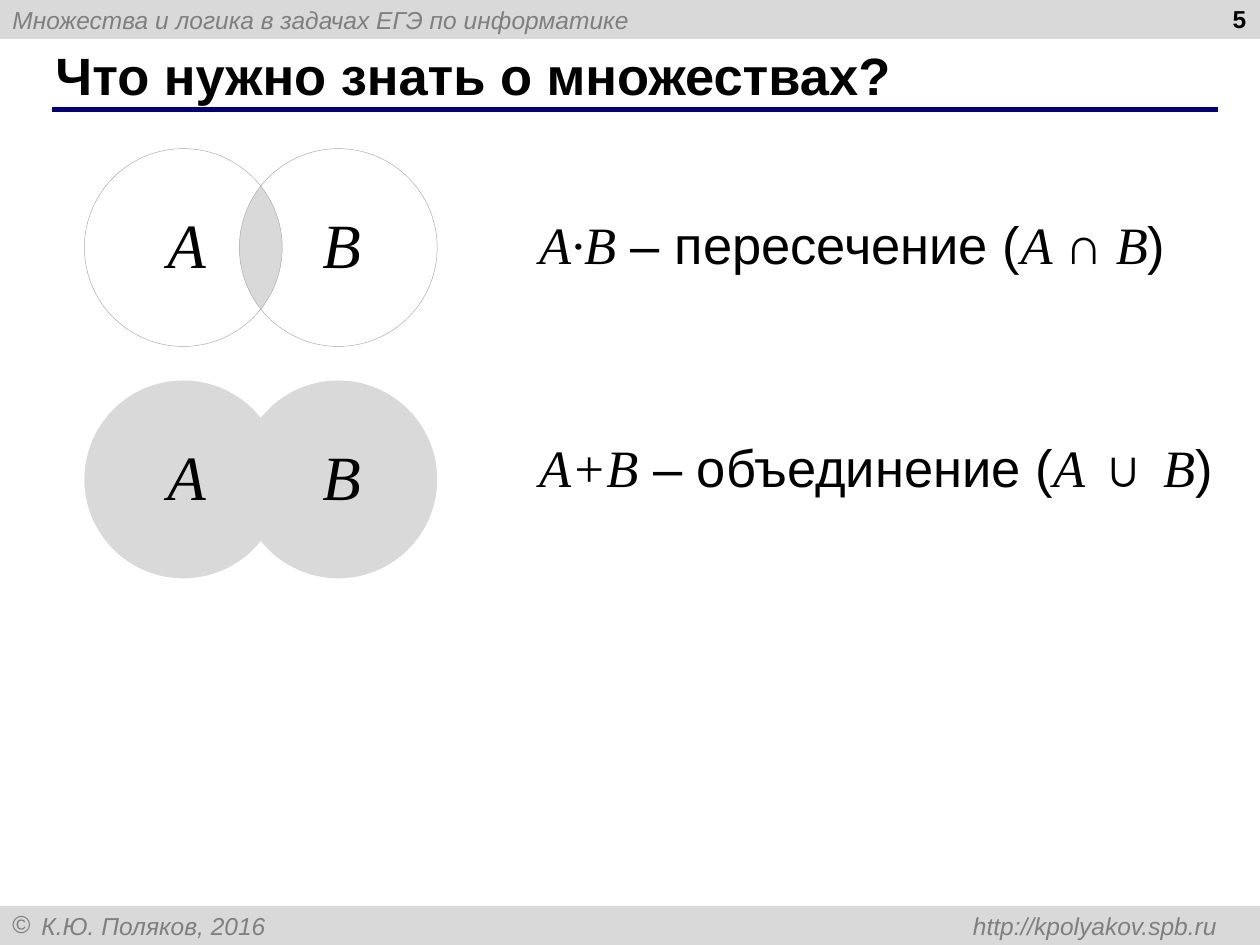
from math import acos, cos, sin
from lxml.etree import SubElement
from pptx import Presentation
from pptx.dml.color import RGBColor
from pptx.enum.shapes import MSO_CONNECTOR, MSO_SHAPE
from pptx.enum.text import MSO_ANCHOR, PP_ALIGN
from pptx.oxml.ns import qn
from pptx.util import Inches, Pt

SANS, SERIF = "Arial", "Times New Roman"
GRAY = "D9D9D9"
BAR = {"size": Pt(14), "name": SANS, "italic": True}


def paint(sp, fill=None, line=None):
    sp.shadow.inherit = False
    for fmt, color in ((sp.fill, fill), (sp.line.fill, line)):
        if color:
            fmt.solid()
            fmt.fore_color.rgb = RGBColor.from_string(color)
        else:
            fmt.background()
    if line:
        sp.line.width = Pt(0.25)


def write(sp, runs, color="000000", align=PP_ALIGN.LEFT, anchor=MSO_ANCHOR.TOP):
    tf = sp.text_frame
    tf.word_wrap = True
    tf.vertical_anchor = anchor
    p = tf.paragraphs[0]
    p.alignment = align
    for text, values in runs:
        r = p.add_run()
        r.text = text
        for key, value in values.items():
            setattr(r.font, key, value)
        r.font.color.rgb = RGBColor.from_string(color)
    return p


prs = Presentation()
prs.slide_width, prs.slide_height = Inches(10), Inches(7.5)
slide = prs.slides.add_slide(prs.slide_layouts[5])
shapes = slide.shapes

bars = [(0, "Множества и логика в задачах ЕГЭ по информатике"),
        (7.19, "К.Ю. Поляков, 2016 \thttp://kpolyakov.spb.ru")]
for top, text in bars:
    sp = shapes.add_shape(MSO_SHAPE.RECTANGLE, 0, Inches(top), Inches(10), Inches(0.31))
    paint(sp, GRAY)
    p = write(sp, [(text, BAR)], "7F7F7F", anchor=MSO_ANCHOR.MIDDLE)

pPr = p._p.get_or_add_pPr()
pPr.set("marL", str(Inches(0.23)))
pPr.set("indent", str(Inches(-0.23)))
SubElement(pPr, qn("a:buFont"), typeface=SANS)
SubElement(pPr, qn("a:buChar"), char="©")
tabs = SubElement(pPr, qn("a:tabLst"))
SubElement(tabs, qn("a:tab"), pos=str(Inches(9.56)), algn="r")

rule = shapes.add_connector(MSO_CONNECTOR.STRAIGHT, Inches(0.41), Inches(0.87),
                            Inches(9.67), Inches(0.87))
rule.line.color.rgb = RGBColor.from_string("000080")
rule.line.width = Pt(3)
SubElement(rule._element.spPr, qn("a:effectLst"))

title = shapes.title
title.left, title.top, title.width, title.height = map(Inches, (0.34, 0.33, 9.16, 0.52))
write(title, [("Что нужно знать о множествах?", {"size": Pt(30), "name": SANS, "bold": True})],
      anchor=MSO_ANCHOR.MIDDLE)

number = shapes.add_textbox(Inches(7.66), Inches(-0.02), Inches(2.33), Inches(0.52))
write(number, [("5", {"size": Pt(14), "name": SANS, "bold": True})], align=PP_ALIGN.RIGHT)

size, step, left = 1.57, 1.23, 0.67
radius = size / 2
half = acos(step / size)
center_y = 1.18 + radius
lens = []
for center_x, side in ((left + radius, 1), (left + step + radius, -1)):
    for i in range(25):
        a = half * (i / 12 - 1)
        lens.append((Inches(center_x + side * radius * cos(a)),
                     Inches(center_y + side * radius * sin(a))))
builder = shapes.build_freeform(*lens[0], scale=1.0)
builder.add_line_segments(lens[1:], close=True)
paint(builder.convert_to_shape(), GRAY)

plain = {"size": Pt(30), "name": SANS}
upright = {"size": Pt(30), "name": SERIF}
slanted = {**upright, "italic": True}
rows = [(1.18, None, "A6A6A6", 1.63, "A·B", " – пересечение (", "∩ "),
        (3.02, GRAY, None, 3.4, "A+B", " – объединение (", "∪ ")]
for top, fill, line, text_top, formula, meaning, sign in rows:
    for i, letter in enumerate("AB"):
        x = left + i * step
        sp = shapes.add_shape(MSO_SHAPE.OVAL, Inches(x), Inches(top), Inches(size), Inches(size))
        paint(sp, fill, line)
        label = shapes.add_textbox(Inches(x + 0.56), Inches(top + 0.4), Inches(0.46), Inches(0.71))
        write(label, [(letter, {**slanted, "size": Pt(36)})])
    box = shapes.add_textbox(Inches(4.18), Inches(text_top), Inches(5.82), Inches(0.61))
    write(box, [(formula, slanted), (meaning, plain), ("A ", slanted),
                (sign, upright), ("B", slanted), (")", plain)])

prs.save("out.pptx")
